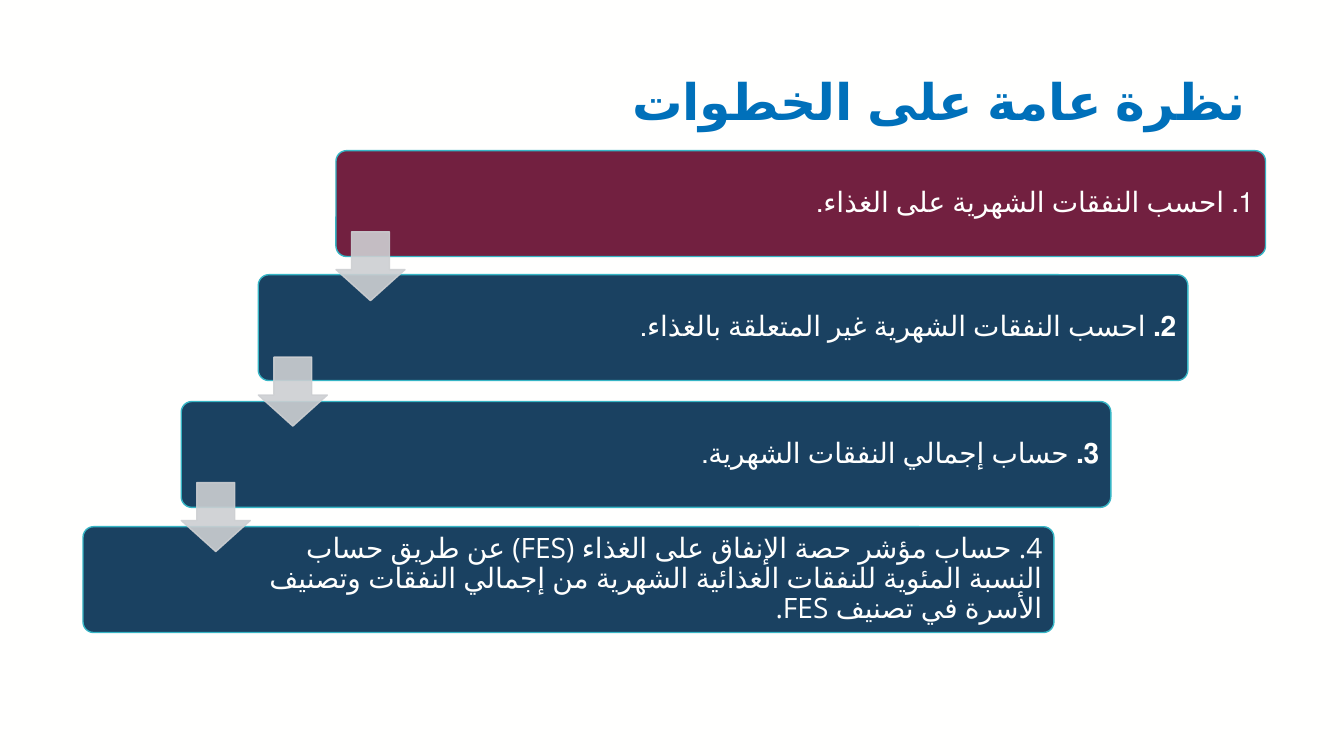
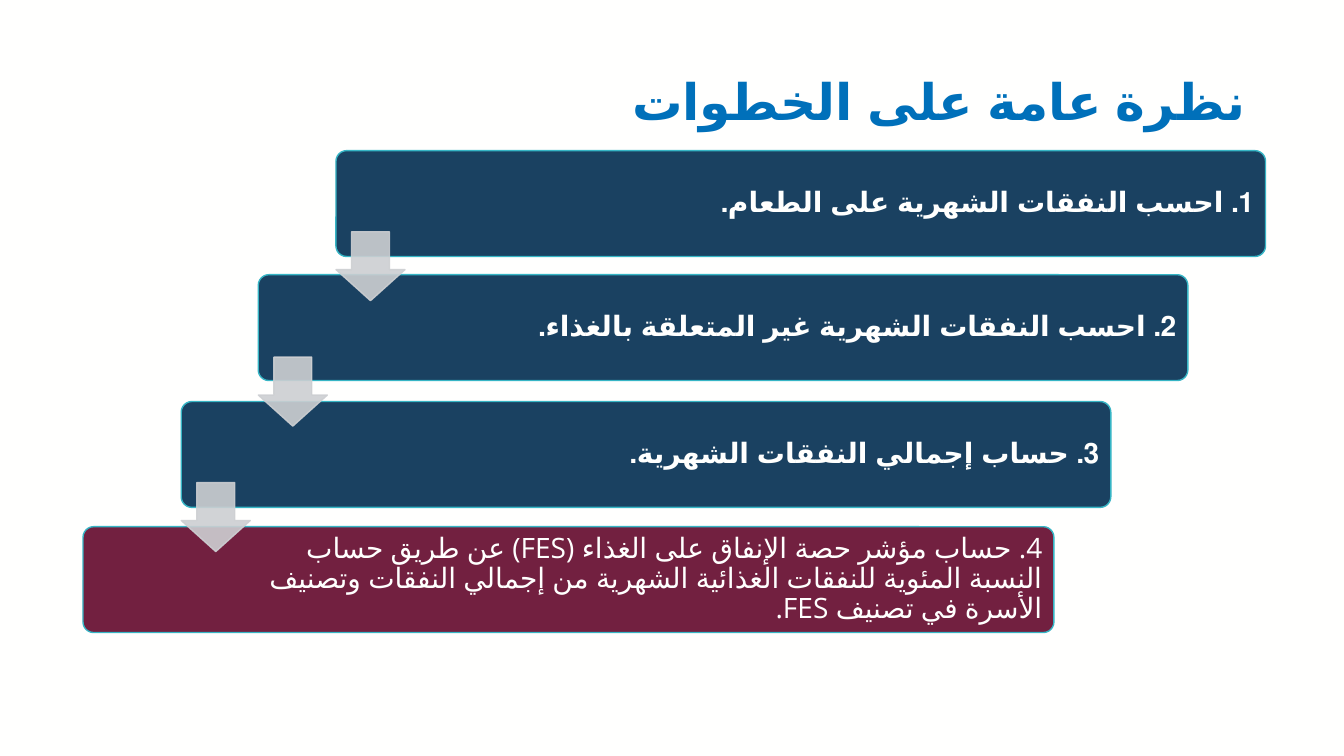
from dataclasses import dataclass

from lxml import etree
from pptx import Presentation
from pptx.dml.color import RGBColor
from pptx.enum import lang, shapes, text
from pptx.oxml.ns import qn
from pptx.util import Pt

# Shared look
PAPER = "FFFFFE"
BLUE = "0070BA"
NAVY = "1A4161"
WINE = "722040"
TEAL = "36B5C5"
GREY = "CDCFD2"
FONT = "Open Sans"
TITLE = "نظرة عامة على الخطوات"


@dataclass(frozen=True)
class Run:
    text: str
    bold: bool = False


@dataclass(frozen=True)
class Bar:
    left: float
    top: float
    width: float = 664


@dataclass(frozen=True)
class Page:
    font: str
    active: int
    steps: list[list[Run]]


# The staircase: each bar but the last hands on to the next by an arrow
BARS = [Bar(240, 107.6), Bar(184.5, 196.2), Bar(129.5, 286.8),
        Bar(59.3, 376.2, 693.5)]
BAR_H = 75.6
ARROW_TOP, ARROW_STEP, ARROW = 165.5, 89.6, 49.3

FINAL = ("4. حساب مؤشر حصة الإنفاق على الغذاء (FES) عن طريق حساب النسبة المئوية "
         "للنفقات الغذائية الشهرية من إجمالي النفقات وتصنيف الأسرة في تصنيف FES.")
OTHER = "احسب النفقات الشهرية غير المتعلقة بالغذاء."
TOTAL = "حساب إجمالي النفقات الشهرية."

PAGES = [
    Page("Calibri", 0, [
        [Run("1. احسب النفقات الشهرية على الغذاء.")],
        [Run("2. ", True), Run(OTHER)],
        [Run("3. ", True), Run(TOTAL)],
        [Run(FINAL)],
    ]),
    Page(FONT, 3, [
        [Run("1. احسب النفقات الشهرية على الطعام.", True)],
        [Run("2. " + OTHER, True)],
        [Run("3. " + TOTAL, True)],
        [Run(FINAL)],
    ]),
]


def paint(color, tone: str) -> None:
    color.rgb = RGBColor.from_string(tone)


def fade(fill, share: int) -> None:
    """Set the opacity, in percent, of a solid fill."""
    for tone in fill.iter(qn("a:srgbClr")):
        etree.SubElement(tone, qn("a:alpha"), val=str(share * 1000))


def write(frame, runs: list[Run], font: str, size: float, tone: str,
          script: str = "") -> None:
    """Fill a frame with one right-to-left paragraph."""
    frame.word_wrap = True
    frame.vertical_anchor = text.MSO_ANCHOR.MIDDLE
    para = frame.paragraphs[0]
    para.alignment = text.PP_ALIGN.RIGHT
    para.line_spacing = 0.9
    para._p.get_or_add_pPr().set("rtl", "1")
    for item in runs:
        run = para.add_run()
        run.text = item.text
        run.font.name = font
        run.font.size = Pt(size)
        run.font.bold = item.bold
        run.font.language_id = lang.MSO_LANGUAGE_ID.ARABIC
        paint(run.font.color, tone)
        if script:
            etree.SubElement(run._r.rPr, qn("a:cs"), typeface=script)


def block(slide, kind, left: float, top: float, width: float, height: float,
          fill: str, line: str):
    shape = slide.shapes.add_shape(kind, Pt(left), Pt(top), Pt(width), Pt(height))
    shape.shadow.inherit = False
    shape.fill.solid()
    paint(shape.fill.fore_color, fill)
    paint(shape.line.color, line)
    shape.line.width = Pt(1)
    return shape


def add_bar(slide, bar: Bar, runs: list[Run], fill: str, script: str) -> None:
    shape = block(slide, shapes.MSO_SHAPE.ROUNDED_RECTANGLE,
                  bar.left, bar.top, bar.width, BAR_H, fill, TEAL)
    shape.adjustments[0] = 0.1
    frame = shape.text_frame
    frame.margin_left, frame.margin_right = Pt(116), Pt(6)
    frame.margin_top = frame.margin_bottom = Pt(4)
    write(frame, runs, FONT, 20, PAPER, script)


def add_arrow(slide, left: float, top: float) -> None:
    shape = block(slide, shapes.MSO_SHAPE.DOWN_ARROW,
                  left, top, ARROW, ARROW, GREY, GREY)
    shape.adjustments[0] = 0.55
    shape.adjustments[1] = 0.45
    fade(shape._element.spPr, 90)


def add_page(deck, layout, page: Page) -> None:
    slide = deck.slides.add_slide(layout)
    write(slide.shapes.title.text_frame, [Run(TITLE, True)], page.font, 36, BLUE)
    last = len(BARS) - 1
    for i, (bar, runs) in enumerate(zip(BARS, page.steps)):
        fill = WINE if i == page.active else NAVY
        add_bar(slide, bar, runs, fill, FONT if i == last else "")
    for i, bar in enumerate(BARS[:last]):
        add_arrow(slide, bar.left, ARROW_TOP + i * ARROW_STEP)


def main() -> None:
    deck = Presentation()
    deck.slide_width, deck.slide_height = Pt(960), Pt(540)

    # Background and title place, inherited by every slide
    back = deck.slide_master.background.fill
    back.solid()
    paint(back.fore_color, PAPER)
    layout = deck.slide_layouts[5]
    title = layout.placeholders[0]
    title.left, title.top = Pt(67), Pt(28.8)
    title.width, title.height = Pt(830), Pt(90.7)

    for page in PAGES:
        add_page(deck, layout, page)
    deck.save("out.pptx")


if __name__ == "__main__":
    main()
